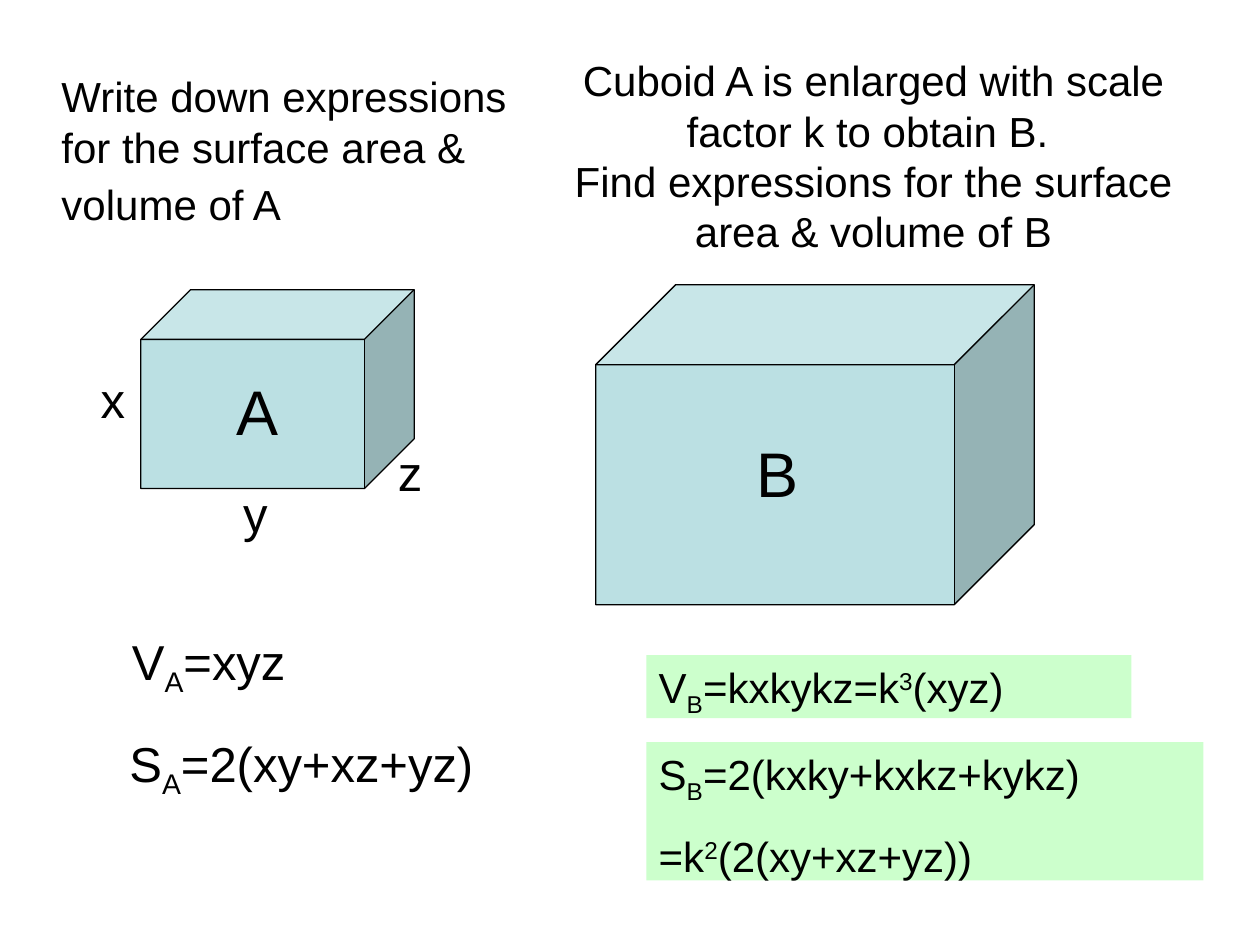
import dataclasses

import pptx
import pptx.dml.color
import pptx.enum.shapes
import pptx.enum.text
import pptx.util

Cm = pptx.util.Cm
Pt = pptx.util.Pt
Align = pptx.enum.text.PP_ALIGN
Anchor = pptx.enum.text.MSO_ANCHOR
Kind = pptx.enum.shapes.MSO_SHAPE


@dataclasses.dataclass(frozen=True)
class Theme:
    font: str = "Arial"
    ink: str = "000000"
    cube: str = "BBE0E3"
    mint: str = "CCFFCC"
    body: int = 24
    label: int = 28
    name: int = 36
    gap: int = 14
    edge: float = 0.75
    sub: int = -25000
    sup: int = 30000


def color(code):
    return pptx.dml.color.RGBColor.from_string(code)


class Board:
    def __init__(self, slide, theme):
        self.slide = slide
        self.theme = theme

    def style(self, run, size, base=0):
        font = run.font
        font.name = self.theme.font
        font.size = Pt(size)
        font.color.rgb = color(self.theme.ink)
        if base:
            run._r.get_or_add_rPr().set("baseline", str(base))

    def fill(self, shape, lines, size):
        """Write lines, each a list of (text, baseline) pairs."""
        frame = shape.text_frame
        frame.word_wrap = True
        frame.auto_size = pptx.enum.text.MSO_AUTO_SIZE.SHAPE_TO_FIT_TEXT
        frame.vertical_anchor = Anchor.TOP
        for i, line in enumerate(lines):
            para = frame.add_paragraph() if i else frame.paragraphs[0]
            para.alignment = Align.LEFT
            para.space_before = Pt(self.theme.gap)
            for text, base in line:
                run = para.add_run()
                run.text = text
                self.style(run, size, base)

    def shape(self, kind, place, paint):
        shape = self.slide.shapes.add_shape(kind, *map(Cm, place))
        shape.shadow.inherit = False
        shape.fill.solid()
        shape.fill.fore_color.rgb = color(paint)
        return shape

    def title(self, text, place):
        frame = self.slide.shapes.add_textbox(*map(Cm, place)).text_frame
        frame.word_wrap = True
        frame.vertical_anchor = Anchor.MIDDLE
        frame.text = text
        para = frame.paragraphs[0]
        para.alignment = Align.CENTER
        for run in para.runs:
            self.style(run, self.theme.body)

    def cube(self, place):
        shape = self.shape(Kind.CUBE, place, self.theme.cube)
        shape.adjustments[0] = 0.25
        shape.line.color.rgb = color(self.theme.ink)
        shape.line.width = Pt(self.theme.edge)

    def text(self, line, place, size):
        box = self.slide.shapes.add_textbox(*map(Cm, place))
        self.fill(box, [line], size)
        return box

    def answer(self, lines, place):
        shape = self.shape(Kind.RECTANGLE, place, self.theme.mint)
        shape.line.fill.background()
        self.fill(shape, lines, self.theme.body)


def main():
    deck = pptx.Presentation()
    deck.slide_width, deck.slide_height = Cm(25.4), Cm(19.05)
    theme = Theme()
    board = Board(deck.slides.add_slide(deck.slide_layouts[6]), theme)
    sub, sup = theme.sub, theme.sup

    # Task for the second cuboid
    board.title(
        "Cuboid A is enlarged with scale factor k to obtain B. \v"
        "Find expressions for the surface area & volume of B",
        (10.74, 0, 13.74, 6.27),
    )

    # Cuboids
    board.cube((2.84, 5.84, 5.51, 4.01))
    board.cube((12.01, 5.74, 8.84, 6.45))

    # Edge labels and names
    for text, left, top in (("y", 4.65, 9.63), ("x", 1.78, 7.32), ("z", 7.77, 8.79)):
        board.text([(text, 0)], (left, top, 3.18, 1.45), theme.label)
    for text, left, top in (("A", 4.52, 7.39), ("B", 15.01, 8.64)):
        board.text([(text, 0)], (left, top, 3.18, 1.78), theme.name)

    # Formulas for A
    board.text([("V", 0), ("A", sub), ("=xyz", 0)],
               (2.41, 12.6, 3.99, 1.45), theme.label)
    board.text([("S", 0), ("A", sub), ("=2(xy+xz+yz)", 0)],
               (2.36, 14.66, 8.53, 1.45), theme.label)

    # Task for the first cuboid, its last line opened up by a larger space
    task = board.text(
        [("Write down expressions for the surface area & volume of A", 0), (" ", 0)],
        (0.99, 1.3, 9.83, 3.48), theme.body,
    )
    task.text_frame.paragraphs[0].runs[-1].font.size = Pt(theme.label)

    # Answers for B
    board.answer(
        [[("V", 0), ("B", sub), ("=kxkykz=k", 0), ("3", sup), ("(xyz)", 0)]],
        (13.03, 13.21, 9.78, 1.27),
    )
    board.answer(
        [[("S", 0), ("B", sub), ("=2(kxky+kxkz+kykz)", 0)],
         [("=k", 0), ("2", sup), ("(2(xy+xz+yz))", 0)]],
        (13.03, 14.96, 11.23, 2.79),
    )

    deck.save("out.pptx")


if __name__ == "__main__":
    main()
